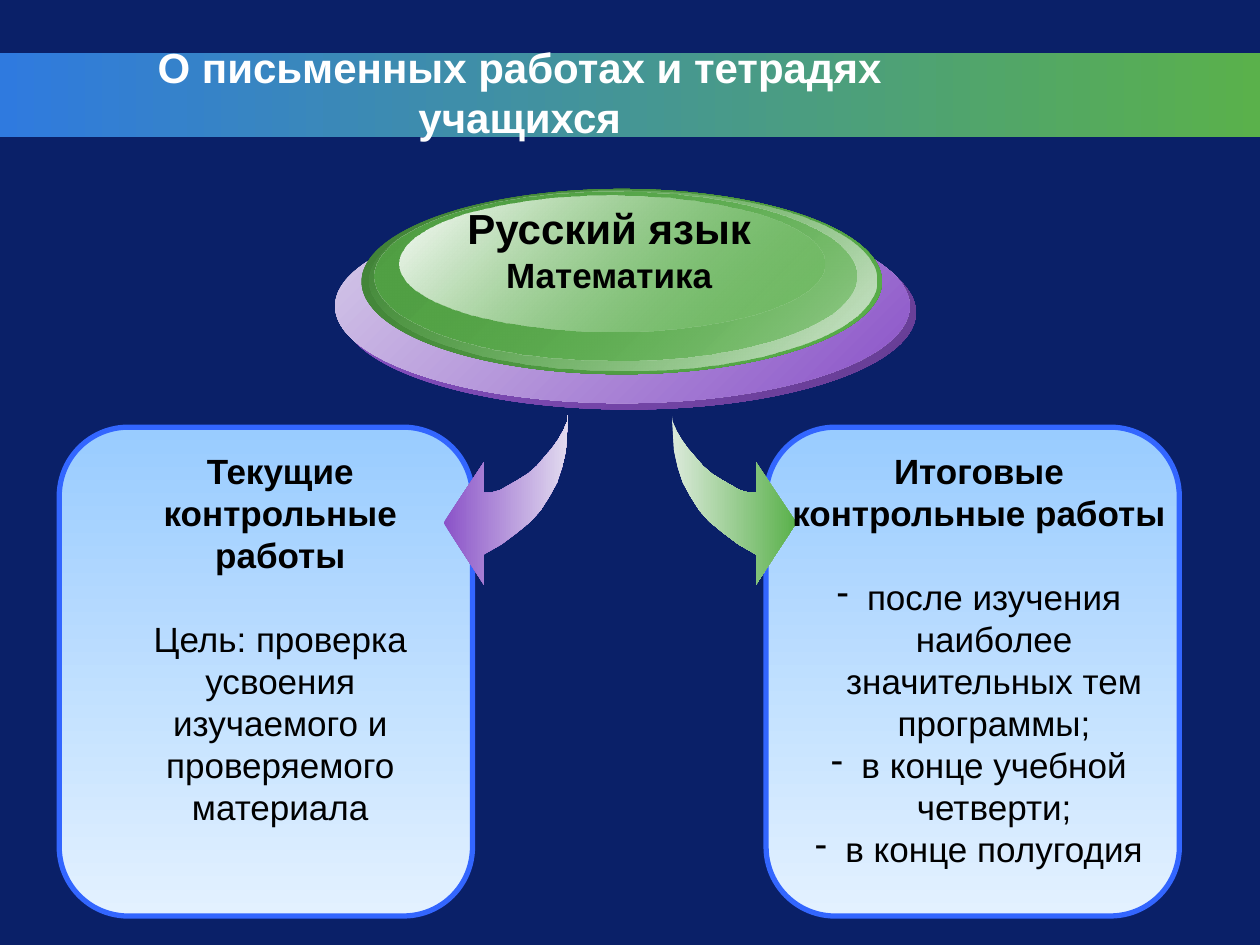
from lxml import etree
from pptx import Presentation
from pptx import util as u
from pptx.dml.color import RGBColor
from pptx.enum import shapes, text
from pptx.oxml.ns import qn

Inches = u.Inches
COLORS = {
    "navy": "0A2068", "blue": "2F7ADF", "green": "5AB14B", "white": "FFFFFF", "black": "000000",
    "sky": "99CCFF", "ice": "E3F1FF", "border": "3366FF", "violet": "8A52C8", "plum": "653C92",
    "lilac": "D6CBE9", "pale lilac": "E2DBEF", "pale green": "DCEADB", "mint": "D8E8D7",
    "dark green": "407F36", "mid green": "51A044",
}


def paint(shape, first, last, angle, alphas=(100, 100)):
    shape.shadow.inherit = False
    shape.line.fill.background()
    shape.fill.gradient()
    shape.fill.gradient_angle = -angle % 360
    for stop, name in zip(shape.fill.gradient_stops, (first, last)):
        stop.color.rgb = RGBColor.from_string(COLORS[name])
    for color, alpha in zip(shape._element.spPr.iter(qn("a:srgbClr")), alphas):
        if alpha < 100:
            etree.SubElement(color, qn("a:alpha"), val=str(alpha * 1000))


def write(frame, lines, color="black"):
    for index, (words, size, bold, space_before, bullet) in enumerate(lines):
        paragraph = frame.paragraphs[0] if index == 0 else frame.add_paragraph()
        paragraph.text = words
        paragraph.alignment = text.PP_ALIGN.CENTER
        paragraph.space_before = u.Pt(space_before)
        if bullet:
            properties = paragraph._p.get_or_add_pPr()
            properties.set("marL", str(Inches(0.24)))
            properties.set("indent", str(Inches(-0.24)))
            etree.SubElement(properties, qn("a:buChar"), char=bullet)
        paragraph.font.name = "Arial"
        paragraph.font.size = u.Pt(size)
        paragraph.font.bold = bold
        paragraph.font.color.rgb = RGBColor.from_string(COLORS[color])


presentation = Presentation()
presentation.slide_width = Inches(10)
presentation.slide_height = Inches(7.5)
slide = presentation.slides.add_slide(presentation.slide_layouts[5])
slide.background.fill.solid()
slide.background.fill.fore_color.rgb = RGBColor.from_string(COLORS["navy"])

band = slide.shapes.add_shape(
    shapes.MSO_SHAPE.RECTANGLE, 0, Inches(0.42), Inches(10), Inches(0.67))
paint(band, "blue", "green", 0)
slide.shapes._spTree.insert(2, band._element)

title = slide.shapes.title
title.left, title.top, title.width, title.height = map(Inches, (0.5, 0.42, 7.25, 0.62))
title.text_frame.auto_size = text.MSO_AUTO_SIZE.NONE
title.text_frame.vertical_anchor = text.MSO_ANCHOR.MIDDLE
write(title.text_frame, [("О письменных работах и тетрадях учащихся", 24, True, 0, None)], "white")

for left in (6.08, 0.47):
    panel = slide.shapes.add_shape(
        shapes.MSO_SHAPE.ROUNDED_RECTANGLE, Inches(left), Inches(3.39), Inches(3.28), Inches(3.88))
    panel.adjustments[0] = 0.167
    paint(panel, "sky", "ice", 90)
    panel.line.color.rgb = RGBColor.from_string(COLORS["border"])
    panel.line.width = u.Pt(3)

arrow_points = [
    (533, 328), (534, 343), (535, 358), (538, 371), (542, 383), (548, 394),
    (555, 405), (563, 414), (574, 423), (586, 432), (600, 440), (600, 464), (632, 415),
    (600, 367), (600, 391), (594, 391), (587, 389), (580, 385), (573, 381), (565, 376),
    (558, 370), (552, 363), (546, 356), (541, 349), (537, 342), (534, 335),
]
mirrored_points = [(984 - x, y) for x, y in arrow_points]
for points, first, last in (
    (mirrored_points, "violet", "pale lilac"),
    (arrow_points, "pale green", "green"),
):
    builder = slide.shapes.build_freeform(*points[0], scale=Inches(0.01))
    builder.add_line_segments(points[1:], close=True)
    paint(builder.convert_to_shape(), first, last, 0)

disc = slide.shapes.add_group_shape()
for box, first, last, alphas in (
    ((2.71, 1.71, 4.56, 1.54), "violet", "plum", (100, 100)),
    ((2.66, 1.66, 4.56, 1.54), "lilac", "violet", (100, 100)),
    ((2.87, 1.5, 4.13, 1.47), "dark green", "green", (100, 100)),
    ((2.93, 1.51, 4.03, 1.43), "green", "mint", (0, 100)),
    ((2.97, 1.52, 3.83, 1.34), "mid green", "green", (100, 48)),
    ((3.17, 1.55, 3.37, 1.08), "white", "green", (100, 38)),
):
    ellipse = disc.shapes.add_shape(shapes.MSO_SHAPE.OVAL, *map(Inches, box))
    paint(ellipse, first, last, 45, alphas)

for box, wrap, lines in (
    ((0.86, 3.52, 2.73, 3.74), True, [
        ("Текущие", 20, True, 0, None),
        ("контрольные", 20, True, 0, None),
        ("работы", 20, True, 0, None),
        ("Цель: проверка усвоения изучаемого и проверяемого материала", 20, False, 24, None),
    ]),
    ((3.56, 1.56, 2.55, 0.83), False, [
        ("Русский язык", 24, True, 0, None),
        ("Математика", 20, True, 0, None),
    ]),
    ((6.17, 3.52, 3.2, 3.7), True, [
        ("Итоговые", 20, True, 0, None),
        ("контрольные работы", 20, True, 0, None),
        ("после изучения наиболее значительных тем программы;", 20, False, 24, "-"),
        ("в конце учебной четверти;", 20, False, 0, "-"),
        ("в конце полугодия", 20, False, 0, "-"),
    ]),
):
    label = slide.shapes.add_textbox(*map(Inches, box))
    label.text_frame.word_wrap = wrap
    write(label.text_frame, lines)

presentation.save("out.pptx")
